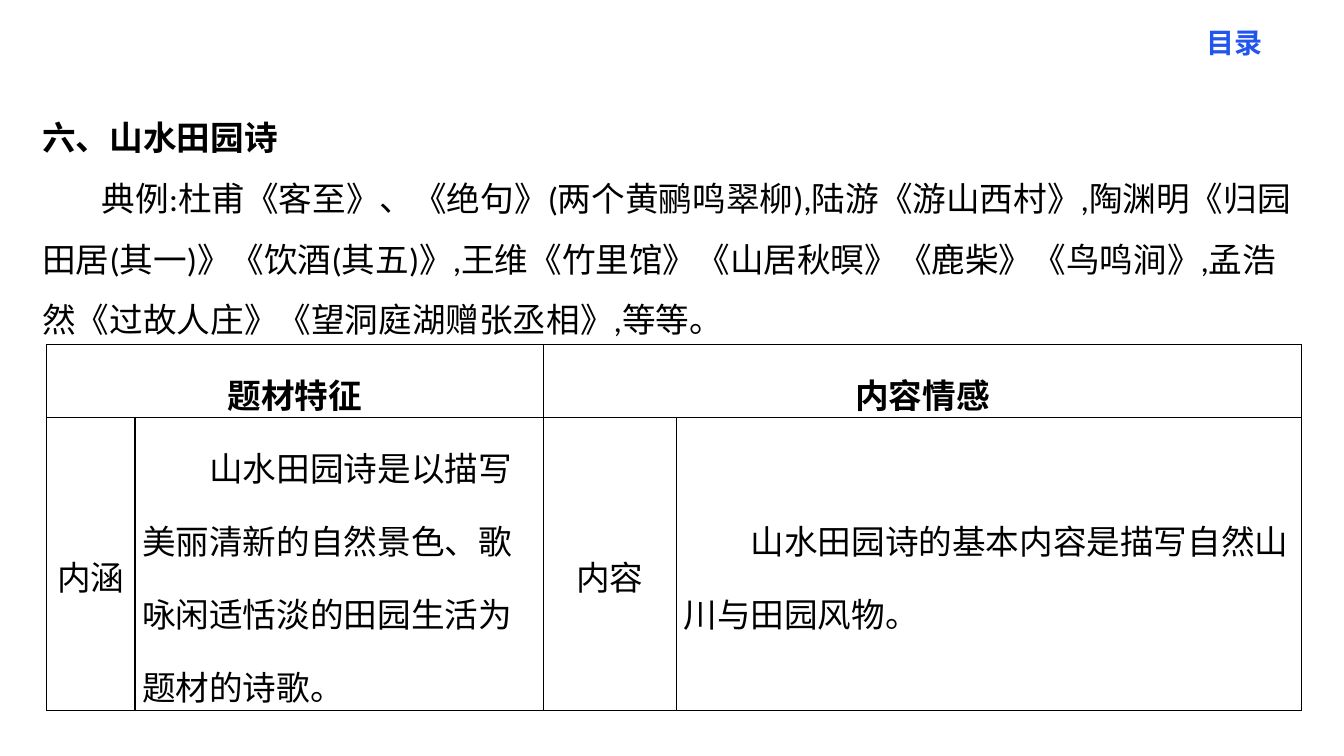
from lxml import etree
from pptx import Presentation
from pptx import util as u
from pptx.dml.color import RGBColor
from pptx.enum import text
from pptx.oxml import ns

INK = {"text": "000000", "link": "2255EE", "line": "000000"}
LATIN = "Calibri"
HAN = "Noto Sans CJK SC"
LEFT = text.PP_ALIGN.LEFT
MID = text.PP_ALIGN.CENTER


class Page:
    def __init__(self, deck):
        self.wide, self.high = deck.slide_width, deck.slide_height
        self.slide = deck.slides.add_slide(deck.slide_layouts[1])

    def x(self, share):
        return u.Emu(round(self.wide * share / 100))

    def y(self, share):
        return u.Emu(round(self.high * share / 100))

    def box(self, left, top, wide, high):
        return self.x(left), self.y(top), self.x(wide), self.y(high)

    def style(self, para, size=24, bold=False, ink="text", name=LATIN,
              asian=LATIN, align=LEFT, space=1.5, indent=0):
        props = para._p.get_or_add_pPr()
        props.set("marL", "0")
        props.set("indent", str(self.x(indent)))
        etree.SubElement(props, ns.qn("a:buNone"))
        para.alignment = align
        para.line_spacing = space
        para.space_before = u.Pt(0)
        font = para.font
        font.size, font.bold = u.Pt(size), bold
        font.color.rgb = RGBColor.from_string(INK[ink])
        font.name = name
        face = etree.SubElement(props.find(ns.qn("a:defRPr")), ns.qn("a:ea"))
        face.set("typeface", asian)

    def fill(self, shape, words, anchor=text.MSO_ANCHOR.TOP, **look):
        frame = shape.text_frame
        frame.word_wrap = True
        frame.auto_size = text.MSO_AUTO_SIZE.NONE
        frame.vertical_anchor = anchor
        frame.margin_left = frame.margin_right = 0
        frame.margin_top = frame.margin_bottom = 0
        frame.text = words
        self.style(frame.paragraphs[0], **look)

    def holder(self, index, area, words, **look):
        shape = self.slide.placeholders[index]
        shape.left, shape.top, shape.width, shape.height = self.box(*area)
        self.fill(shape, words, **look)

    def label(self, area, words, **look):
        shape = self.slide.shapes.add_textbox(*self.box(*area))
        self.fill(shape, words, text.MSO_ANCHOR.MIDDLE, **look)

    def border(self, cell):
        props = cell._tc.get_or_add_tcPr()
        for spot, side in enumerate(("lnL", "lnR", "lnT", "lnB")):
            line = etree.Element(ns.qn("a:" + side), w=str(u.Pt(1)))
            paint = etree.SubElement(line, ns.qn("a:solidFill"))
            etree.SubElement(paint, ns.qn("a:srgbClr"), val=INK["line"])
            props.insert(spot, line)

    def table(self, left, top, cols, rows, cells, spans):
        area = self.box(left, top, sum(cols), sum(rows))
        grid = self.slide.shapes.add_table(len(rows), len(cols), *area).table
        for col, share in zip(grid.columns, cols):
            col.width = self.x(share)
        for row, share in zip(grid.rows, rows):
            row.height = self.y(share)
        for cell in grid.iter_cells():
            cell.fill.background()
            self.border(cell)
        for row, first, last in spans:
            grid.cell(row, first).merge(grid.cell(row, last))
        for (row, col), (words, inset, look) in cells.items():
            cell = grid.cell(row, col)
            cell.vertical_anchor = text.MSO_ANCHOR.MIDDLE
            cell.margin_left = cell.margin_right = self.x(inset)
            cell.margin_top = cell.margin_bottom = 0
            cell.text = words
            self.style(cell.text_frame.paragraphs[0], asian=HAN, **look)


def main():
    deck = Presentation()
    deck.slide_width, deck.slide_height = u.Inches(13.33), u.Inches(7.5)
    page = Page(deck)
    page.label((88.9, 2.67, 5.85, 5.87), "目录", size=20, bold=True,
               ink="link", name=HAN, asian=HAN, align=MID, space=1.0)
    page.holder(0, (3.15, 12.8, 93.7, 8.13), "六、山水田园诗", bold=True)
    page.holder(1, (3.15, 20.93, 93.7, 24.67),
                "典例:杜甫《客至》、《绝句》(两个黄鹂鸣翠柳),陆游《游山西村》,"
                "陶渊明《归园田居(其一)》《饮酒(其五)》,王维《竹里馆》"
                "《山居秋暝》《鹿柴》《鸟鸣涧》,孟浩然《过故人庄》"
                "《望洞庭湖赠张丞相》,等等。", indent=4.43)
    head = {"bold": True, "align": MID}
    side = {"align": MID}
    prose = {"indent": 5}
    cells = {
        (0, 0): ("题材特征", 0, head),
        (0, 2): ("内容情感", 0.53, head),
        (1, 0): ("内涵", 0, side),
        (1, 1): ("山水田园诗是以描写美丽清新的自然景色、"
                 "歌咏闲适恬淡的田园生活为题材的诗歌。", 0.53, prose),
        (1, 2): ("内容", 0, side),
        (1, 3): ("山水田园诗的基本内容是描写自然山川与田园风物。", 0.53, prose),
    }
    page.table(3.45, 45.6, (6.6, 30.38, 9.9, 46.51), (9.6, 38.67),
               cells, ((0, 0, 1), (0, 2, 3)))
    deck.save("out.pptx")


if __name__ == "__main__":
    main()
